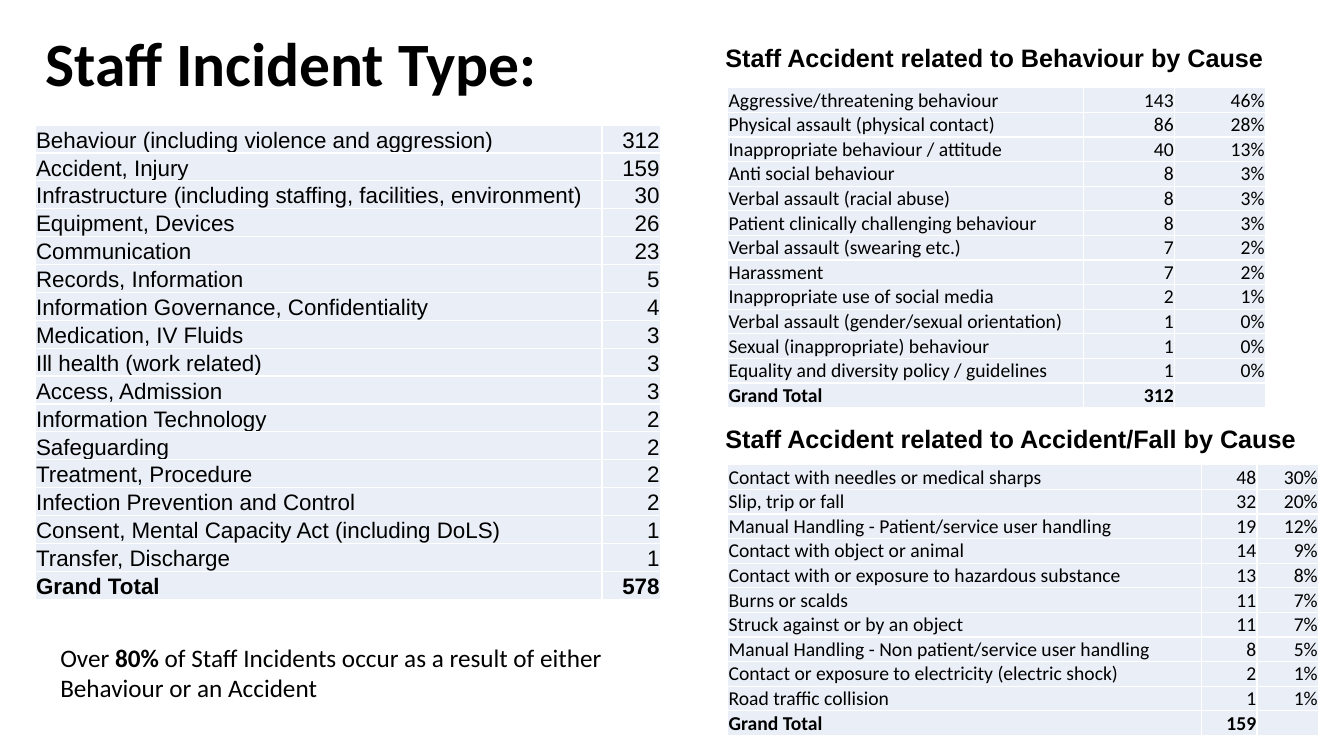
from dataclasses import dataclass

from lxml.etree import SubElement
from pptx import Presentation
from pptx.dml.color import RGBColor
from pptx.enum.text import MSO_ANCHOR, MSO_AUTO_SIZE, PP_ALIGN
from pptx.oxml import parse_xml
from pptx.oxml.ns import nsdecls, qn
from pptx.util import Cm, Pt


@dataclass(frozen=True)
class Theme:
    """Colours, fonts and type sizes of the slide."""
    ink: str = "000000"
    band: str = "EAEFF7"
    rule: str = "FFFFFF"
    body_font: str = "Calibri"
    report_font: str = "Arial"
    title_size: int = 44
    text_size: int = 18
    types_size: int = 16
    causes_size: int = 14


THEME = Theme()

INCIDENT_TYPES = [
    ("Behaviour (including violence and aggression)", "312"),
    ("Accident, Injury", "159"),
    ("Infrastructure (including staffing, facilities, environment)", "30"),
    ("Equipment, Devices", "26"),
    ("Communication", "23"),
    ("Records, Information", "5"),
    ("Information Governance, Confidentiality", "4"),
    ("Medication, IV Fluids", "3"),
    ("Ill health (work related)", "3"),
    ("Access, Admission", "3"),
    ("Information Technology", "2"),
    ("Safeguarding", "2"),
    ("Treatment, Procedure", "2"),
    ("Infection Prevention and Control", "2"),
    ("Consent, Mental Capacity Act (including DoLS)", "1"),
    ("Transfer, Discharge", "1"),
    ("Grand Total", "578"),
]

BEHAVIOUR_CAUSES = [
    ("Aggressive/threatening behaviour", "143", "46%"),
    ("Physical assault (physical contact)", "86", "28%"),
    ("Inappropriate behaviour / attitude", "40", "13%"),
    ("Anti social behaviour", "8", "3%"),
    ("Verbal assault (racial abuse)", "8", "3%"),
    ("Patient clinically challenging behaviour", "8", "3%"),
    ("Verbal assault (swearing etc.)", "7", "2%"),
    ("Harassment", "7", "2%"),
    ("Inappropriate use of social media", "2", "1%"),
    ("Verbal assault (gender/sexual orientation)", "1", "0%"),
    ("Sexual (inappropriate) behaviour", "1", "0%"),
    ("Equality and diversity policy / guidelines", "1", "0%"),
    ("Grand Total", "312", ""),
]

ACCIDENT_CAUSES = [
    ("Contact with needles or medical sharps", "48", "30%"),
    ("Slip, trip or fall", "32", "20%"),
    ("Manual Handling - Patient/service user handling", "19", "12%"),
    ("Contact with object or animal", "14", "9%"),
    ("Contact with or exposure to hazardous substance", "13", "8%"),
    ("Burns or scalds", "11", "7%"),
    ("Struck against or by an object", "11", "7%"),
    ("Manual Handling - Non patient/service user handling", "8", "5%"),
    ("Contact or exposure to electricity (electric shock)", "2", "1%"),
    ("Road traffic collision", "1", "1%"),
    ("Grand Total", "159", ""),
]


def add_run(paragraph, text, font, size, bold=False):
    """Append one formatted run to the paragraph."""
    run = paragraph.add_run()
    run.text = text
    run.font.name = font
    run.font.size = Pt(size)
    run.font.bold = bold
    run.font.color.rgb = RGBColor.from_string(THEME.ink)


def add_textbox(slide, left, top, width, height):
    """Add a wrapping text box and return its first paragraph."""
    frame = slide.shapes.add_textbox(left, top, width, height).text_frame
    frame.word_wrap = True
    frame.auto_size = MSO_AUTO_SIZE.SHAPE_TO_FIT_TEXT
    return frame.paragraphs[0]


def rule_cell(cell):
    """Draw a thin rule on all four sides of the cell."""
    properties = cell._tc.get_or_add_tcPr()
    for position, side in enumerate(("lnL", "lnR", "lnT", "lnB")):
        properties.insert(position, parse_xml(
            f'<a:{side} {nsdecls("a")} w="12700"><a:solidFill>'
            f'<a:srgbClr val="{THEME.rule}"/></a:solidFill></a:{side}>'))


def fill_cell(cell, text, font, size, bold, align):
    """Write and format one table cell."""
    cell.margin_left = cell.margin_right = cell.margin_top = Cm(0.02)
    cell.margin_bottom = 0
    cell.vertical_anchor = MSO_ANCHOR.BOTTOM
    cell.fill.solid()
    cell.fill.fore_color.rgb = RGBColor.from_string(THEME.band)
    rule_cell(cell)
    paragraph = cell.text_frame.paragraphs[0]
    paragraph.alignment = align
    if text:
        add_run(paragraph, text, font, size, bold)
    else:
        SubElement(paragraph._p, qn("a:endParaRPr"), sz=str(size * 100))


def add_counts(slide, left, top, height, widths, records, font, size):
    """Add a table of counts whose last row is a bold total."""
    table = slide.shapes.add_table(
        len(records), len(widths), left, top, sum(widths), height).table
    table.first_row = table.horz_banding = False
    for column, width in zip(table.columns, widths):
        column.width = width
    for number, record in enumerate(records):
        table.rows[number].height = height // len(records)
        for place, text in enumerate(record):
            fill_cell(table.cell(number, place), text, font, size,
                      bold=number == len(records) - 1,
                      align=PP_ALIGN.RIGHT if place else PP_ALIGN.LEFT)


def add_incident_types(slide, left, top, width):
    """Place the title, the incident type table and the finding below it."""
    title = slide.shapes.title
    title.left, title.top, title.width, title.height = left, top, width, Cm(2.34)
    frame = title.text_frame
    frame.word_wrap = True
    frame.auto_size = MSO_AUTO_SIZE.NONE
    frame.vertical_anchor = MSO_ANCHOR.MIDDLE
    heading = frame.paragraphs[0]
    heading.alignment = PP_ALIGN.LEFT
    heading.line_spacing = 0.9
    add_run(heading, "Staff Incident Type:", THEME.body_font, THEME.title_size, True)

    count_width = Cm(1.47)
    add_counts(slide, left, top + Cm(2.64), Cm(11.96),
               (width - count_width, count_width), INCIDENT_TYPES,
               THEME.report_font, THEME.types_size)

    indent = Cm(0.38)
    finding = add_textbox(slide, left + indent, top + Cm(15.54),
                          width - indent, Cm(1.8))
    for text, bold in (("Over ", False), ("80%", True),
                       (" of Staff Incidents occur as a result of either "
                        "Behaviour or an Accident", False)):
        add_run(finding, text, THEME.body_font, THEME.text_size, bold)


def add_causes(slide, left, top, width, drop, heading, widths, causes):
    """Place a heading with its table of causes the given drop below."""
    paragraph = add_textbox(slide, left, top, width, Cm(1.02))
    add_run(paragraph, heading, THEME.report_font, THEME.text_size, True)
    add_counts(slide, left + Cm(0.31), top + drop, Cm(0.62) * len(causes),
               widths, causes, THEME.body_font, THEME.causes_size)


def main():
    """Build the staff incident slide and save it."""
    deck = Presentation()
    deck.slide_width, deck.slide_height = Cm(33.87), Cm(19.05)
    slide = deck.slides.add_slide(deck.slide_layouts[5])
    add_incident_types(slide, Cm(0.89), Cm(0.51), Cm(15.75))
    causes_left = Cm(18.03)
    add_causes(slide, causes_left, Cm(0.94), Cm(14.94), Cm(1.27),
               "Staff Accident related to Behaviour by Cause",
               (Cm(8.97), Cm(2.29), Cm(2.29)), BEHAVIOUR_CAUSES)
    add_causes(slide, causes_left, Cm(10.54), Cm(16.08), Cm(1.17),
               "Staff Accident related to Accident/Fall by Cause",
               (Cm(11.94), Cm(1.4), Cm(1.55)), ACCIDENT_CAUSES)
    deck.save("out.pptx")


if __name__ == "__main__":
    main()
